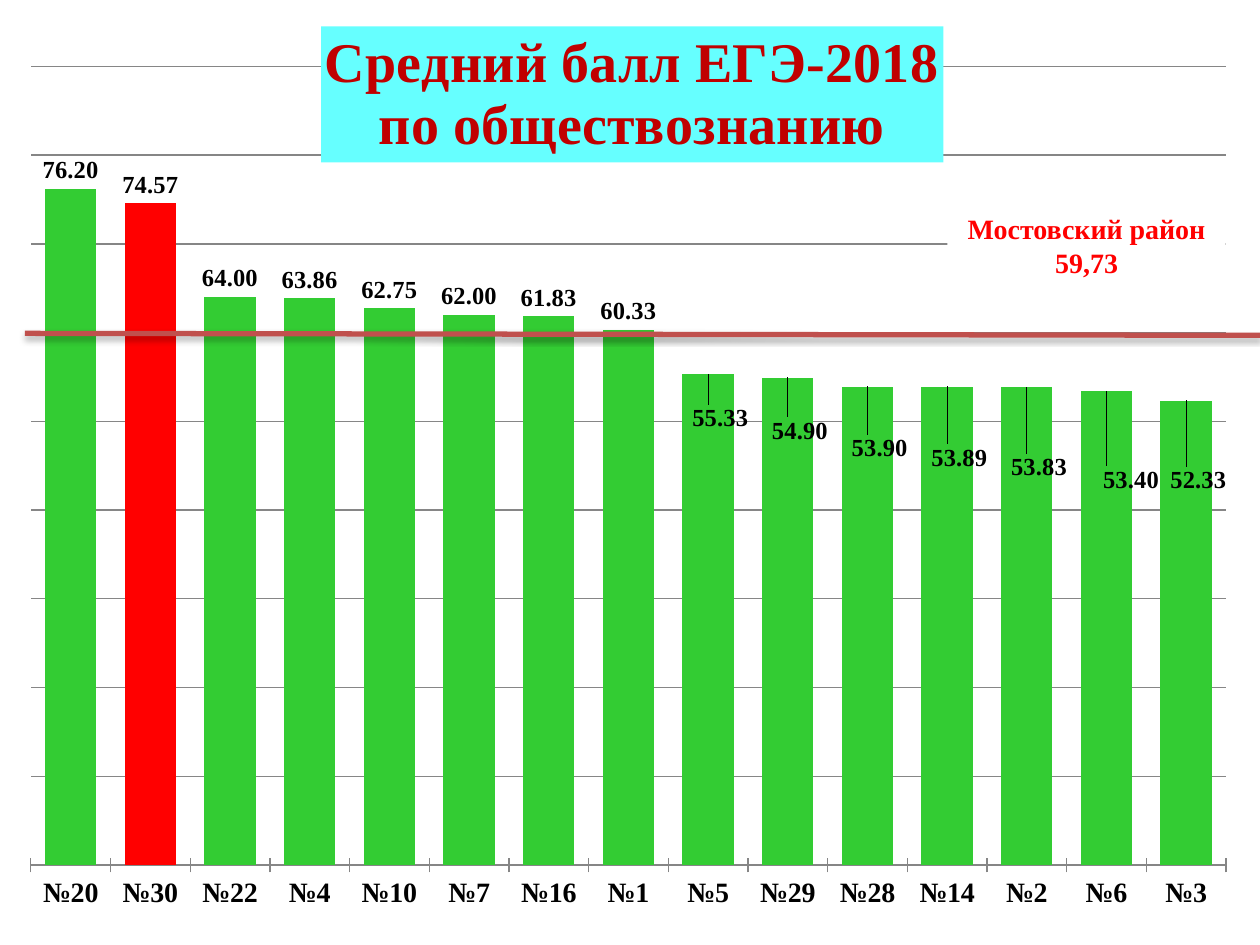
from dataclasses import dataclass
from lxml import etree
from pptx import Presentation, oxml
from pptx import util as u
from pptx.chart import data as cd
from pptx.dml.color import RGBColor
from pptx.enum import chart as ec, shapes, text


@dataclass(frozen=True)
class Theme:
    font: str = "Times New Roman"
    base: str = "Calibri"
    black: str = "000000"
    white: str = "FFFFFF"
    grid: str = "868686"
    bar: str = "33CC33"
    mark: str = "FF0000"
    rule: str = "C0504D"
    head: str = "C00000"
    band: str = "66FFFF"
    big: int = 32
    mid: int = 16
    tag: int = 14
    small: int = 10


T = Theme()
NS = ('xmlns:a="http://schemas.openxmlformats.org/drawingml/2006/main" '
      'xmlns:c="http://schemas.openxmlformats.org/drawingml/2006/chart"')
SCORES = {
    "№20": 76.2, "№30": 74.57, "№22": 64, "№4": 63.86, "№10": 62.75,
    "№7": 62, "№16": 61.83, "№1": 60.33, "№5": 55.33, "№29": 54.9,
    "№28": 53.9, "№14": 53.89, "№2": 53.83, "№6": 53.4, "№3": 52.33,
}
SHIFTS = {
    "№5": (0.01, 0.07), "№29": (0.01, 0.08), "№28": (0.01, 0.09),
    "№14": (0.01, 0.1), "№2": (0.01, 0.11), "№6": (0.02, 0.12),
    "№3": (0.01, 0.11),
}


def rgb(code):
    return RGBColor.from_string(code)


def paint(fill, code):
    fill.solid()
    fill.fore_color.rgb = rgb(code)


def style(font, size, color=T.black, bold=True, name=T.font):
    font.size, font.bold, font.name = u.Pt(size), bold, name
    font.color.rgb = rgb(color)


def write(frame, words, align=text.PP_ALIGN.CENTER, **form):
    for i, line in enumerate(words.split("\n")):
        para = frame.add_paragraph() if i else frame.paragraphs[0]
        para.alignment = align
        run = para.add_run()
        run.text = line
        style(run.font, **form)


def node(xml):
    return oxml.parse_xml(xml.replace(">", f" {NS}>", 1))


def place(host, index, inner=False, **vals):
    for old in host.xpath("./c:layout"):
        host.remove(old)
    tags = '<c:layoutTarget val="inner"/>' if inner else ""
    if "w" in vals or host.tag.endswith("title"):
        tags += '<c:xMode val="edge"/><c:yMode val="edge"/>'
    tags += "".join(f'<c:{key} val="{val}"/>' for key, val in vals.items())
    host.insert(index, node(
        f"<c:layout><c:manualLayout>{tags}</c:manualLayout></c:layout>"))


def add_tags(chart, plot, row):
    plot.has_data_labels = True
    tags = plot.data_labels
    tags.show_value = True
    tags.number_format, tags.number_format_is_linked = "0.00", False
    tags.position = ec.XL_LABEL_POSITION.OUTSIDE_END
    style(tags.font, T.tag)
    names = list(SCORES)
    for name in SHIFTS:
        tag = row.points[names.index(name)].data_label
        style(tag.font, T.tag)
        tag.position = ec.XL_LABEL_POSITION.OUTSIDE_END
    sers = chart.element.xpath(".//c:ser/c:dLbls")[0]
    for name, (x, y) in SHIFTS.items():
        spot = sers.xpath(f"./c:dLbl[c:idx/@val='{names.index(name)}']")[0]
        place(spot, 1, x=x, y=y)
        spot.insert(2, node('<c:numFmt formatCode="0.00" sourceLinked="0"/>'
                            .replace("/>", "></c:numFmt>")))
        spot.insert(3, node(
            f'<c:spPr><a:solidFill><a:srgbClr val="{T.white}"/>'
            "</a:solidFill></c:spPr>"))
    tags = row.data_labels
    tags.show_value = True
    tags.number_format, tags.number_format_is_linked = "0.00", False
    tags.position = ec.XL_LABEL_POSITION.OUTSIDE_END
    style(tags.font, T.tag)


def add_axes(chart):
    cat, val = chart.category_axis, chart.value_axis
    cat.major_tick_mark = ec.XL_TICK_MARK.CROSS
    cat.format.line.color.rgb = rgb(T.grid)
    style(cat.tick_labels.font, T.mid)
    val.minimum_scale, val.maximum_scale, val.major_unit = 0, 90, 10
    val.has_major_gridlines = True
    val.major_gridlines.format.line.color.rgb = rgb(T.grid)
    val.tick_labels.number_format = "0.00"
    val.tick_labels.number_format_is_linked = False
    val.visible = False


def add_bars(slide, box):
    data = cd.CategoryChartData(number_format="0.00")
    data.categories = list(SCORES)
    data.add_series("Series 1", list(SCORES.values()))
    chart = slide.shapes.add_chart(
        ec.XL_CHART_TYPE.COLUMN_CLUSTERED, *box, data).chart
    style(chart.font, T.small, bold=False, name=T.base)
    chart.has_legend = False
    plot = chart.plots[0]
    plot.gap_width, plot.vary_by_categories = 55, False
    row = plot.series[0]
    paint(row.format.fill, T.bar)
    paint(row.points[1].format.fill, T.mark)
    add_axes(chart)
    add_tags(chart, plot, row)
    chart.has_title = True
    head = chart.chart_title
    write(head.text_frame, "Средний балл ЕГЭ-2018\nпо обществознанию",
          size=T.big, color=T.head)
    paint(head.format.fill, T.band)
    place(head.element, 1, x=0.26, y=0)
    place(chart.element.xpath(".//c:plotArea")[0], 0, inner=True,
          x=0.025, y=0.045, w=0.968, h=0.894)


def add_mean(slide, box):
    left, top, wide, high = box
    line = slide.shapes.add_connector(
        shapes.MSO_CONNECTOR.STRAIGHT, left, top, left + wide, top + high)
    line.line.color.rgb = rgb(T.rule)
    line.line.width = u.Pt(3)
    props = line.element.xpath("./p:spPr")[0]
    props.append(node(
        '<a:effectLst><a:outerShdw blurRad="40000" dist="23000" '
        'dir="5400000" rotWithShape="0">'
        f'<a:srgbClr val="{T.black}"><a:alpha val="35000"/></a:srgbClr>'
        "</a:outerShdw></a:effectLst>"))


def add_note(slide, box):
    note = slide.shapes.add_shape(shapes.MSO_SHAPE.RECTANGLE, *box)
    note.shadow.inherit = False
    paint(note.fill, T.white)
    note.line.fill.background()
    frame = note.text_frame
    frame.word_wrap = True
    frame.vertical_anchor = text.MSO_ANCHOR.MIDDLE
    write(frame, "Мостовский район\n59,73", size=T.mid, color=T.mark)


def cells(*sizes):
    return [u.Cm(size) for size in sizes]


def main():
    deck = Presentation()
    deck.slide_width, deck.slide_height = cells(25.4, 19.05)
    slide = deck.slides.add_slide(deck.slide_layouts[6])
    add_bars(slide, cells(0, 0.53, 24.89, 18.01))
    add_mean(slide, cells(0.5, 6.72, 24.9, 0.04))
    add_note(slide, cells(19.1, 3.94, 5.61, 2.01))
    deck.save("out.pptx")


if __name__ == "__main__":
    main()
